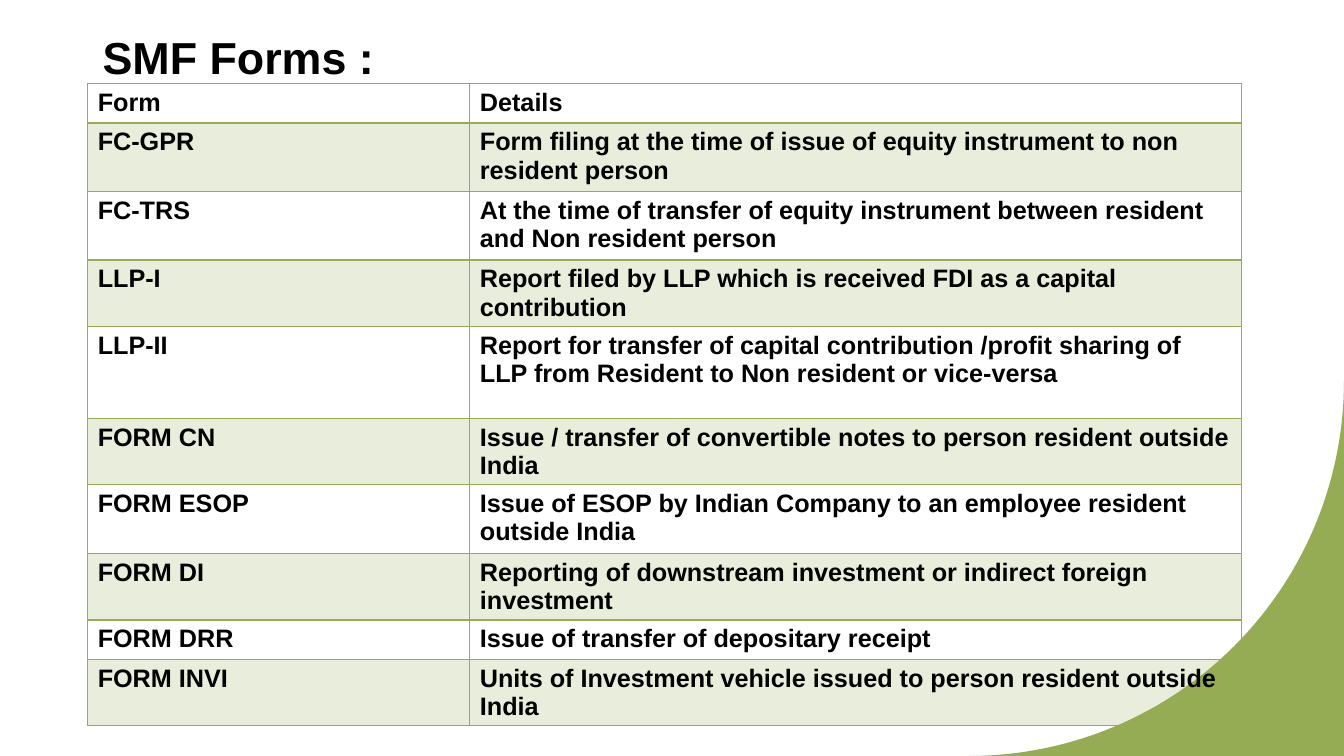
from math import cos, pi, sin

from lxml import etree
from pptx import Presentation
from pptx.dml.color import RGBColor
from pptx.enum.text import MSO_ANCHOR
from pptx.oxml.ns import qn
from pptx.util import Inches, Pt

HEADING = "SMF Forms :"
FORMS = [
    ("Form", "Details", 0.39),
    ("FC-GPR", "Form filing at the time of issue of equity instrument to non resident person", 0.68),
    ("FC-TRS", "At the time of transfer of equity instrument between resident and Non resident person", 0.68),
    ("LLP-I", "Report filed by LLP which is received FDI as a capital contribution", 0.66),
    ("LLP-II", "Report for transfer of capital contribution /profit sharing of LLP "
               "from Resident to Non resident or vice-versa", 0.91),
    ("FORM CN", "Issue / transfer of convertible notes to person resident outside India", 0.66),
    ("FORM ESOP", "Issue of ESOP by Indian Company to an employee resident outside India", 0.68),
    ("FORM DI", "Reporting of downstream investment or indirect foreign investment", 0.66),
    ("FORM DRR", "Issue of transfer of depositary receipt", 0.39),
    ("FORM INVI", "Units of Investment vehicle issued to person resident outside India", 0.66),
]
COLORS = {"green": "95AB54", "ink": "000000"}
FONT = "Arial"
SLIDE_W, SLIDE_H = 13.33, 7.5
COLUMNS = (3.79, 7.65)
TABLE_LEFT, TABLE_TOP = 0.87, 0.83
CELL_BOTTOM = 0.01
CORNER_RADIUS = 3.72
CORNER_STEPS = 60
BAND_OPACITY = 20


def style_text(paragraph, size):
    for run in paragraph.runs:
        run.font.name = FONT
        run.font.size = Pt(size)
        run.font.bold = True
        run.font.color.rgb = RGBColor.from_string(COLORS["ink"])


def add_corner(slide):
    center_x, center_y = SLIDE_W - CORNER_RADIUS, SLIDE_H - CORNER_RADIUS
    angles = [pi / 2 * step / CORNER_STEPS for step in range(CORNER_STEPS + 1)]
    arc = [(Inches(center_x + CORNER_RADIUS * cos(a)),
            Inches(center_y + CORNER_RADIUS * sin(a))) for a in angles]
    outline = slide.shapes.build_freeform(*arc[0])
    outline.add_line_segments(arc[1:] + [(Inches(SLIDE_W), Inches(SLIDE_H))], close=True)
    corner = outline.convert_to_shape()
    corner.shadow.inherit = False
    corner.fill.solid()
    corner.fill.fore_color.rgb = RGBColor.from_string(COLORS["green"])
    corner.line.fill.background()


def add_heading(slide):
    heading = slide.shapes.add_textbox(Inches(0.92), Inches(0.15), Inches(11.5), Inches(0.73))
    frame = heading.text_frame
    frame.word_wrap = True
    frame.vertical_anchor = MSO_ANCHOR.BOTTOM
    frame.text = HEADING
    frame.paragraphs[0].line_spacing = 1.1
    style_text(frame.paragraphs[0], 32)


def set_borders(cell, widths):
    props = cell._tc.get_or_add_tcPr()
    for place, (side, width) in enumerate(widths.items()):
        border = etree.Element(qn(f"a:ln{side}"), w=str(Pt(width)))
        fill = etree.SubElement(border, qn("a:solidFill"))
        etree.SubElement(fill, qn("a:srgbClr"), val=COLORS["green"])
        props.insert(place, border)


def fill_band(cell, banded):
    if not banded:
        cell.fill.background()
        return
    cell.fill.solid()
    cell.fill.fore_color.rgb = RGBColor.from_string(COLORS["green"])
    color = cell._tc.tcPr.find(qn("a:solidFill")).find(qn("a:srgbClr"))
    etree.SubElement(color, qn("a:alpha"), val=str(BAND_OPACITY * 1000))


def add_forms(slide):
    height = sum(row[-1] for row in FORMS)
    forms = slide.shapes.add_table(
        len(FORMS), len(COLUMNS), Inches(TABLE_LEFT), Inches(TABLE_TOP),
        Inches(sum(COLUMNS)), Inches(height)).table
    forms.first_row = forms.horz_banding = False
    for column, width in zip(forms.columns, COLUMNS):
        column.width = Inches(width)
    for index, (*texts, row_height) in enumerate(FORMS):
        forms.rows[index].height = Inches(row_height)
        widths = {"L": 1, "R": 1, "T": 2 if index == 1 else 1, "B": 2 if index == 0 else 1}
        for column, text in enumerate(texts):
            cell = forms.cell(index, column)
            cell.margin_bottom = Inches(CELL_BOTTOM)
            cell.text_frame.text = text
            style_text(cell.text_frame.paragraphs[0], 18)
            fill_band(cell, index % 2 == 1)
            set_borders(cell, widths)


def main():
    deck = Presentation()
    deck.slide_width, deck.slide_height = Inches(SLIDE_W), Inches(SLIDE_H)
    slide = deck.slides.add_slide(deck.slide_layouts[6])
    add_corner(slide)
    add_heading(slide)
    add_forms(slide)
    deck.save("out.pptx")


if __name__ == "__main__":
    main()
